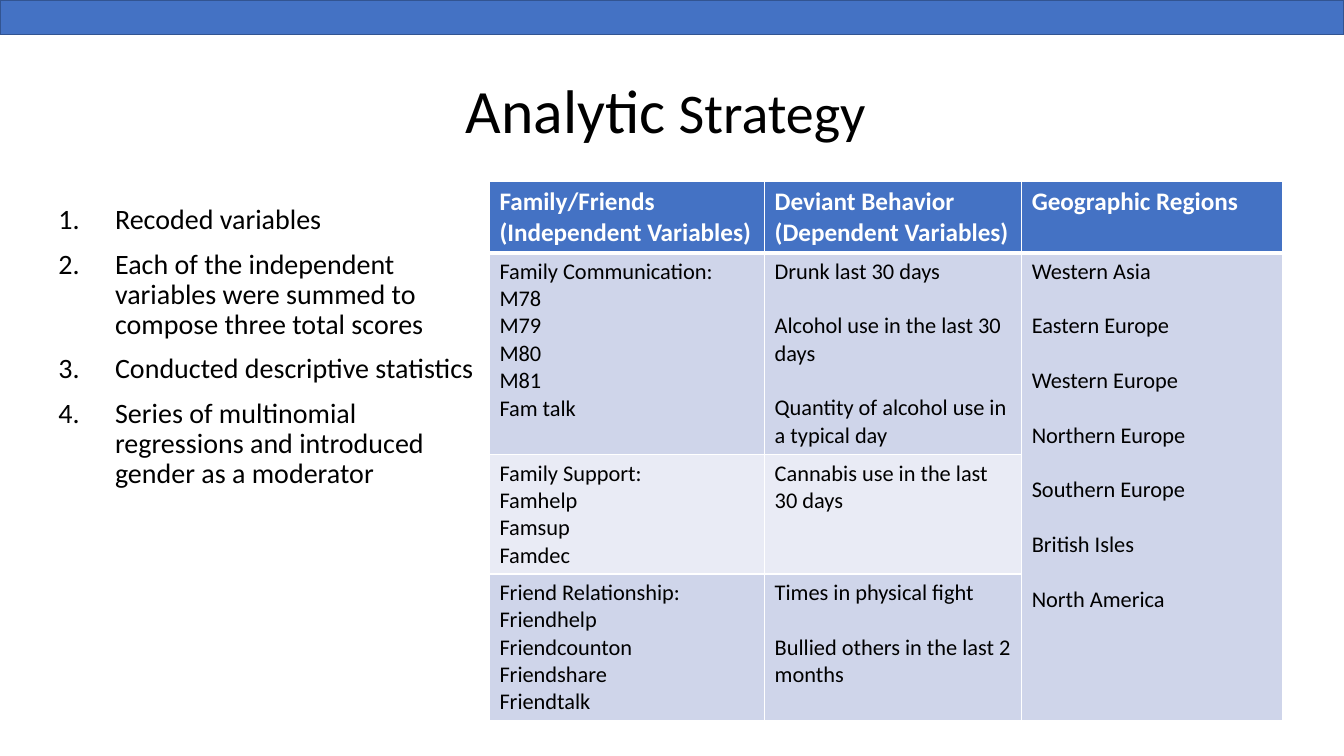
"""Build the Analytic Strategy slide with a numbered list and a variables table."""
from lxml.etree import SubElement
from pptx import Presentation
from pptx.dml.color import RGBColor
from pptx.enum.shapes import MSO_SHAPE
from pptx.enum.text import MSO_ANCHOR, MSO_AUTO_SIZE, PP_ALIGN
from pptx.oxml.ns import qn
from pptx.util import Pt

BLUE = RGBColor(0x44, 0x72, 0xC4)
NAVY = RGBColor(0x32, 0x54, 0x91)
BAND = RGBColor(0xCF, 0xD5, 0xEA)
PALE = RGBColor(0xE9, 0xEB, 0xF5)
WHITE = RGBColor(0xFF, 0xFF, 0xFF)
BLACK = RGBColor(0, 0, 0)
FONT = "Calibri"


def add_span(para, text, size, color=BLACK, bold=False):
    span = para.add_run()
    span.text = text
    span.font.name = FONT
    span.font.size = Pt(size)
    span.font.color.rgb = color
    span.font.bold = bold


def add_border(cell, side, width):
    border = SubElement(cell._tc.get_or_add_tcPr(), qn(f"a:{side}"), w=str(Pt(width)))
    fill = SubElement(border, qn("a:solidFill"))
    SubElement(fill, qn("a:srgbClr"), val=str(WHITE))


deck = Presentation()
deck.slide_width, deck.slide_height = Pt(960), Pt(540)
page = deck.slides.add_slide(deck.slide_layouts[5])

title = page.shapes.title
title.left, title.top, title.width, title.height = Pt(66), Pt(28.8), Pt(828), Pt(104.4)
title.text_frame.auto_size = MSO_AUTO_SIZE.NONE
title.text_frame.vertical_anchor = MSO_ANCHOR.MIDDLE
para = title.text_frame.paragraphs[0]
para.alignment = PP_ALIGN.CENTER
para.line_spacing = 0.9
add_span(para, "Analytic", 44)
add_span(para, " Strategy ", 40)

steps = [
    "Recoded variables",
    "Each of the independent variables were summed to compose three total scores",
    "Conducted descriptive statistics",
    "Series of multinomial regressions and introduced gender as a moderator",
]
box = page.shapes.add_textbox(Pt(34.6), Pt(143.3), Pt(314.6), Pt(342))
box.text_frame.word_wrap = True
for index, step in enumerate(steps):
    para = box.text_frame.add_paragraph() if index else box.text_frame.paragraphs[0]
    para.line_spacing = 0.9
    para.space_before = Pt(10 if index else 0)
    props = para._p.get_or_add_pPr()
    props.set("marL", str(Pt(40.5)))
    props.set("indent", str(Pt(-40.5)))
    SubElement(props, qn("a:buFont"), typeface="+mj-lt")
    SubElement(props, qn("a:buAutoNum"), type="arabicPeriod")
    add_span(para, step, 20)

regions = ["Western Asia", "Eastern Europe", "Western Europe", "Northern Europe",
           "Southern Europe", "British Isles", "North America"]
rows = [
    [["Family/Friends", "(Independent Variables)"],
     ["Deviant Behavior", "(Dependent Variables)"],
     ["Geographic Regions"]],
    [["Family Communication:", "M78", "M79", "M80", "M81", "Fam talk"],
     ["Drunk last 30 days", "Alcohol use in the last 30 days",
      "Quantity of alcohol use in a typical day"],
     regions],
    [["Family Support:", "Famhelp", "Famsup", "Famdec"],
     ["Cannabis use in the last 30 days"],
     []],
    [["Friend Relationship:", "Friendhelp", "Friendcounton", "Friendshare", "Friendtalk"],
     ["Times in physical fight", "Bullied others in the last 2 months"],
     []],
]
widths = [196.6, 183.6, 186.5]
heights = [50.8, 144.2, 85.2, 104.8]
fills = [BLUE, BAND, PALE, BAND]

frame = page.shapes.add_table(4, 3, Pt(349.6), Pt(129.8), Pt(sum(widths)), Pt(sum(heights)))
table = frame.table
for column, width in zip(table.columns, widths):
    column.width = Pt(width)
for row, height in zip(table.rows, heights):
    row.height = Pt(height)
table.cell(1, 2).merge(table.cell(3, 2))

for r, row in enumerate(rows):
    for c, lines in enumerate(row):
        cell = table.cell(r, c)
        for side in ("lnL", "lnR", "lnT", "lnB"):
            divider = (r, side) in ((0, "lnB"), (1, "lnT"))
            add_border(cell, side, 3 if divider else 1)
        cell.fill.solid()
        cell.fill.fore_color.rgb = BAND if r and c == 2 else fills[r]
        for index, line in enumerate(lines):
            para = cell.text_frame.add_paragraph() if index else cell.text_frame.paragraphs[0]
            if r and c and index:
                para.space_before = Pt(19.5)
            if r:
                add_span(para, line, 16)
            else:
                add_span(para, line, 18, WHITE, True)

banner = page.shapes.add_shape(MSO_SHAPE.RECTANGLE, 0, 0, Pt(960), Pt(24.6))
banner.shadow.inherit = False
banner.fill.solid()
banner.fill.fore_color.rgb = BLUE
banner.line.color.rgb = NAVY
banner.line.width = Pt(1)

deck.save("out.pptx")
